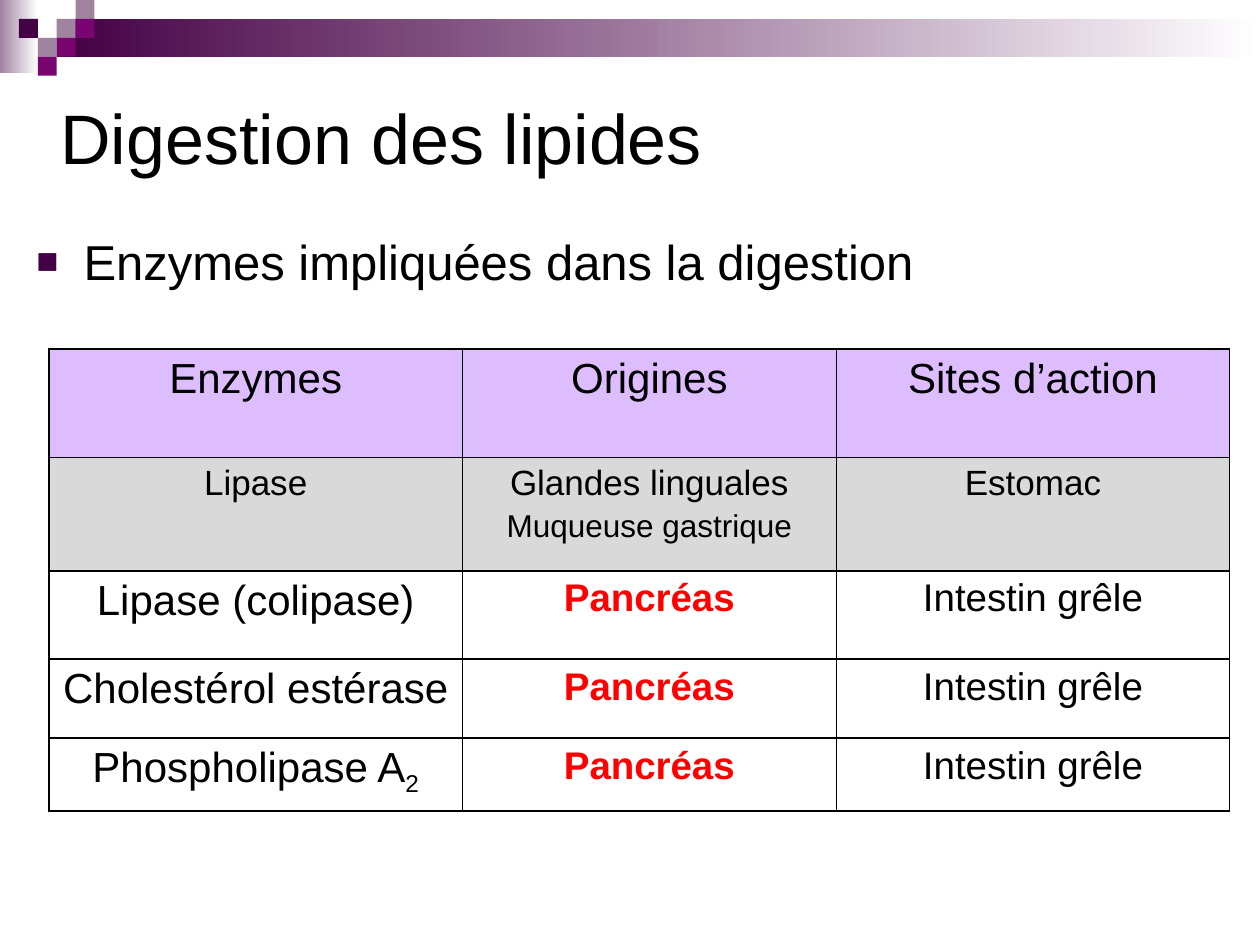
from dataclasses import dataclass

from lxml import etree
from pptx import Presentation
from pptx.dml.color import RGBColor
from pptx.enum.shapes import MSO_SHAPE
from pptx.enum.text import MSO_ANCHOR, PP_ALIGN
from pptx.oxml.ns import qn
from pptx.util import Pt

RECT = MSO_SHAPE.RECTANGLE
CENTER = PP_ALIGN.CENTER
TOP, MIDDLE = MSO_ANCHOR.TOP, MSO_ANCHOR.MIDDLE


@dataclass(frozen=True)
class Theme:
    font: str = "Arial"
    black: str = "000000"
    white: str = "FFFFFF"
    red: str = "FF0000"
    plum: str = "440044"
    magenta: str = "790571"
    mauve: str = "9F839F"
    lilac: str = "DEBDFF"
    grey: str = "D9D9D9"
    title: int = 40
    body: int = 28
    large: int = 24
    origin: int = 22
    medium: int = 20
    small: int = 18


T = Theme()
COLUMNS = [236.2, 213.8, 224.6]
# Each cell is a list of paragraphs: (text, size, optional subscript).
ROWS = [
    (62, T.lilac, [[(name, T.large)] for name in ("Enzymes", "Origines", "Sites d’action")]),
    (64.8, T.grey, [
        [("Lipase", T.medium)],
        [("Glandes linguales", T.medium), ("Muqueuse gastrique", T.small)],
        [("Estomac", T.medium)],
    ]),
] + [
    (height, None, [
        [(*enzyme, )],
        [("Pancréas", T.origin)],
        [("Intestin grêle", T.origin)],
    ])
    for height, enzyme in [
        (50.4, ("Lipase (colipase)", T.large)),
        (45.2, ("Cholestérol estérase", T.large)),
        (41.6, ("Phospholipase A", T.large, "2")),
    ]
]


def add_run(p, text, size, color=T.black, bold=False):
    r = p.add_run()
    r.text = text
    r.font.name = T.font
    r.font.size = Pt(size)
    r.font.bold = bold
    r.font.color.rgb = RGBColor.from_string(color)
    return r


def add_rect(slide, box, *colors):
    """Add a borderless rectangle; two colours make a left-to-right gradient."""
    sp = slide.shapes.add_shape(RECT, *map(Pt, box))
    sp.shadow.inherit = False
    sp.line.fill.background()
    if len(colors) == 1:
        sp.fill.solid()
        sp.fill.fore_color.rgb = RGBColor.from_string(colors[0])
    else:
        sp.fill.gradient()
        sp.fill.gradient_angle = 0
        for stop, color in zip(sp.fill.gradient_stops, colors):
            stop.color.rgb = RGBColor.from_string(color)


def add_banner(slide, left, top, width, cell):
    """Draw the gradient band and its checkered squares on a grid of cells."""
    add_rect(slide, (left, top, 2 * cell, 41.8), T.mauve, T.white)
    add_rect(slide, (left + 3 * cell, top + cell, width - 3 * cell, 2 * cell), T.plum, T.white)
    squares = [
        (3, 1, T.mauve), (4, 0, T.mauve), (4, 1, T.magenta), (2, 2, T.mauve),
        (1, 1, T.plum), (3, 2, T.magenta), (2, 3, T.magenta),
    ]
    for col, row, color in squares:
        add_rect(slide, (left + col * cell, top + row * cell, cell, cell), color)


def add_text_box(slide, box, text, size, anchor):
    tf = slide.shapes.add_textbox(*map(Pt, box)).text_frame
    tf.word_wrap = True
    tf.vertical_anchor = anchor
    p = tf.paragraphs[0]
    add_run(p, text, size)
    return p


def add_bullet(p, indent):
    pPr = p._p.get_or_add_pPr()
    pPr.set("marL", str(Pt(indent)))
    pPr.set("indent", str(-Pt(indent)))
    color = etree.SubElement(pPr, qn("a:buClr"))
    etree.SubElement(color, qn("a:srgbClr"), val=T.plum)
    etree.SubElement(pPr, qn("a:buSzPct"), val="75000")
    etree.SubElement(pPr, qn("a:buFont"), typeface=T.font)
    etree.SubElement(pPr, qn("a:buChar"), char="■")


def set_borders(cell):
    tcPr = cell._tc.get_or_add_tcPr()
    for i, side in enumerate(("lnL", "lnR", "lnT", "lnB")):
        ln = etree.Element(qn(f"a:{side}"), w=str(Pt(1)))
        fill = etree.SubElement(ln, qn("a:solidFill"))
        etree.SubElement(fill, qn("a:srgbClr"), val=T.black)
        tcPr.insert(i, ln)


def fill_cell(cell, paragraphs, fill):
    if fill:
        cell.fill.solid()
        cell.fill.fore_color.rgb = RGBColor.from_string(fill)
    else:
        cell.fill.background()
    set_borders(cell)
    tf = cell.text_frame
    for i, (text, size, *subscript) in enumerate(paragraphs):
        p = tf.add_paragraph() if i else tf.paragraphs[0]
        p.alignment = CENTER
        p.space_before = Pt(0.2 * size)
        is_pancreas = text == "Pancréas"
        add_run(p, text, size, T.red if is_pancreas else T.black, is_pancreas)
        for sub in subscript:
            r = add_run(p, sub, size)
            r._r.get_or_add_rPr().set("baseline", "-25000")


def add_enzyme_table(slide, left, top):
    width, height = sum(COLUMNS), sum(row[0] for row in ROWS)
    frame = slide.shapes.add_table(
        len(ROWS), len(COLUMNS), *map(Pt, (left, top, width, height)))
    table = frame.table
    table.first_row = table.horz_banding = False
    for column, column_width in zip(table.columns, COLUMNS):
        column.width = Pt(column_width)
    for row, (row_height, fill, cells) in zip(table.rows, ROWS):
        row.height = Pt(row_height)
        for cell, paragraphs in zip(row.cells, cells):
            fill_cell(cell, paragraphs, fill)


def main():
    prs = Presentation()
    prs.slide_width, prs.slide_height = Pt(720), Pt(540)
    slide = prs.slides.add_slide(prs.slide_layouts[6])
    add_banner(slide, 0, 0, 720, 10.8)
    add_text_box(slide, (27.4, 23.8, 648, 108), "Digestion des lipides", T.title, MIDDLE)
    p = add_text_box(slide, (13.7, 128.9, 648, 306),
                     "Enzymes impliquées dans la digestion", T.body, TOP)
    p.space_before = Pt(0.2 * T.body)
    add_bullet(p, 27)
    add_enzyme_table(slide, 28, 199.4)
    prs.save("out.pptx")


if __name__ == "__main__":
    main()
